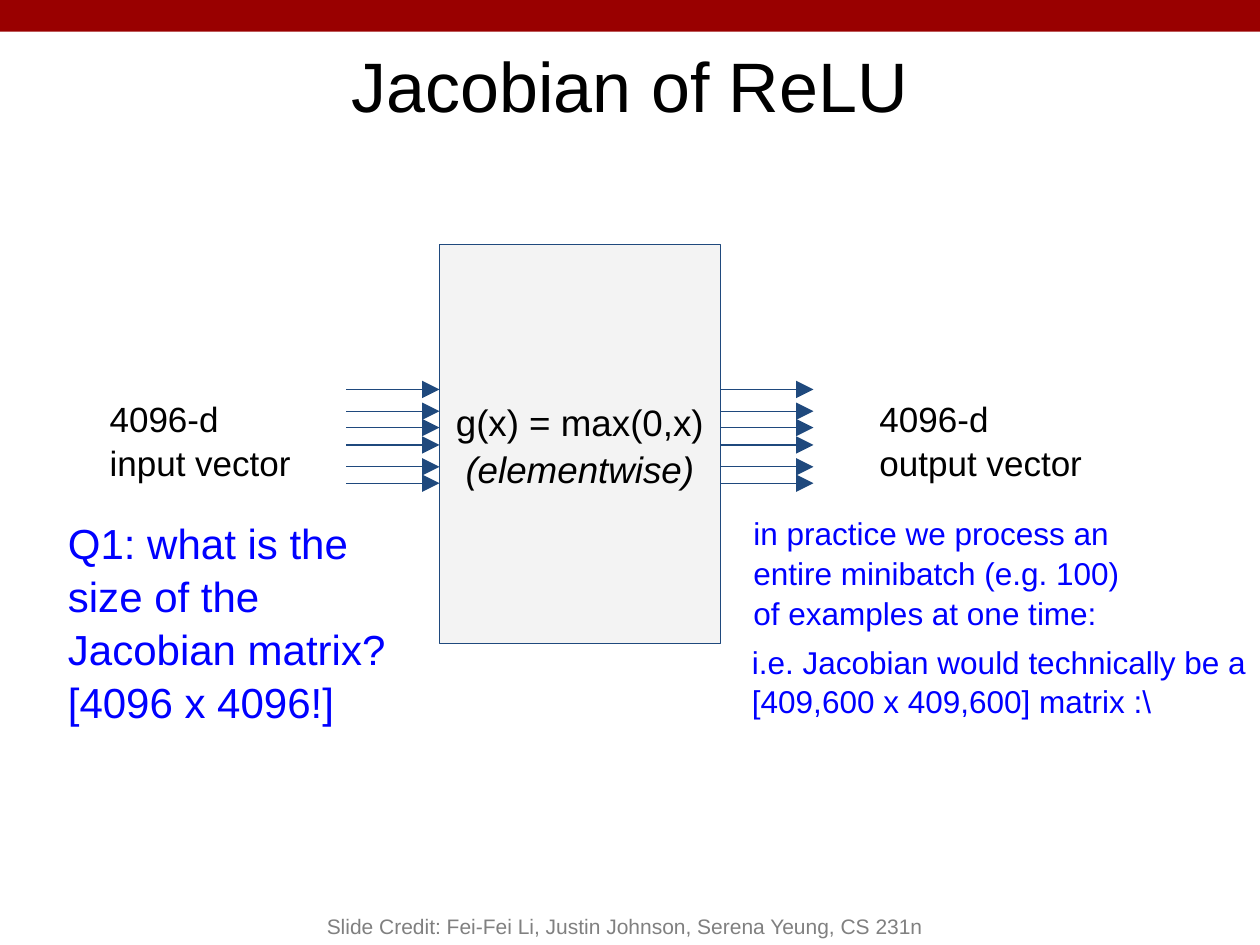
from lxml import etree
from pptx import Presentation
from pptx.dml.color import RGBColor
from pptx.enum.shapes import MSO_CONNECTOR, MSO_SHAPE
from pptx.enum.text import MSO_ANCHOR, PP_ALIGN
from pptx.oxml.ns import qn
from pptx.util import Cm, Pt

BLACK = RGBColor(0x00, 0x00, 0x00)
BLUE = RGBColor(0x00, 0x00, 0xFF)
GRAY = RGBColor(0x80, 0x80, 0x80)
NAVY = RGBColor(0x1F, 0x49, 0x7D)
PALE = RGBColor(0xF3, 0xF3, 0xF3)
RED = RGBColor(0x99, 0x00, 0x00)

FONT = "Arial"
LINE_WIDTH = Pt(0.75)
BODY_SPACING = 1.05

GATE_LEFT, GATE_TOP, GATE_WIDTH, GATE_HEIGHT = 8.86, 4.93, 5.66, 8.05
ARROW_LENGTH = 1.88
ARROW_GROUP_TOPS = (7.85, 8.97)
ARROW_OFFSETS = (0, 0.44, 0.77)
LABEL_TOP = 7.72


def write_lines(frame, lines, size, color, align=PP_ALIGN.LEFT, spacing=None,
                italic_lines=()):
    """Write each line as one paragraph with a single run."""
    for index, line in enumerate(lines):
        paragraph = frame.paragraphs[0] if index == 0 else frame.add_paragraph()
        paragraph.alignment = align
        if spacing:
            paragraph.line_spacing = spacing
        run = paragraph.add_run()
        run.text = line
        run.font.name = FONT
        run.font.size = Pt(size)
        run.font.color.rgb = color
        if index in italic_lines:
            run.font.italic = True


def set_insets(frame, inset):
    frame.margin_left = frame.margin_right = inset
    frame.margin_top = frame.margin_bottom = inset


def add_text(slide, left, top, width, height, lines, size, color):
    box = slide.shapes.add_textbox(Cm(left), Cm(top), Cm(width), Cm(height))
    frame = box.text_frame
    frame.word_wrap = True
    set_insets(frame, Cm(0.25))
    write_lines(frame, lines, size, color, spacing=BODY_SPACING)


def add_centered_text(slide, left, top, width, height, line, size, color, anchor):
    box = slide.shapes.add_textbox(Cm(left), Cm(top), Cm(width), Cm(height))
    frame = box.text_frame
    frame.word_wrap = True
    frame.vertical_anchor = anchor
    write_lines(frame, [line], size, color, PP_ALIGN.CENTER)


def add_rectangle(slide, left, top, width, height, fill, outline=None):
    rectangle = slide.shapes.add_shape(
        MSO_SHAPE.RECTANGLE, Cm(left), Cm(top), Cm(width), Cm(height))
    rectangle.shadow.inherit = False
    rectangle.fill.solid()
    rectangle.fill.fore_color.rgb = fill
    if outline is None:
        rectangle.line.fill.background()
    else:
        rectangle.line.color.rgb = outline
        rectangle.line.width = LINE_WIDTH
    return rectangle


def add_gate(slide):
    gate = add_rectangle(slide, GATE_LEFT, GATE_TOP, GATE_WIDTH, GATE_HEIGHT,
                         PALE, NAVY)
    frame = gate.text_frame
    frame.word_wrap = True
    frame.vertical_anchor = MSO_ANCHOR.MIDDLE
    set_insets(frame, Cm(0.25))
    write_lines(frame, ["g(x) = max(0,x)", "(elementwise)"], 21, BLACK,
                PP_ALIGN.CENTER, BODY_SPACING, italic_lines=(1,))


def add_arrow(slide, left, y):
    arrow = slide.shapes.add_connector(
        MSO_CONNECTOR.STRAIGHT, Cm(left), Cm(y), Cm(left + ARROW_LENGTH), Cm(y))
    arrow.line.color.rgb = NAVY
    arrow.line.width = LINE_WIDTH
    properties = arrow.element.spPr
    head = etree.SubElement(properties.find(qn("a:ln")), qn("a:tailEnd"))
    head.set("type", "triangle")
    head.set("w", "lg")
    head.set("len", "lg")
    etree.SubElement(properties, qn("a:effectLst"))


def add_arrow_bundle(slide, left):
    for group_top in ARROW_GROUP_TOPS:
        for offset in ARROW_OFFSETS:
            add_arrow(slide, left, group_top + offset)


def main():
    presentation = Presentation()
    presentation.slide_width = Cm(25.4)
    presentation.slide_height = Cm(19.05)
    slide = presentation.slides.add_slide(presentation.slide_layouts[6])

    add_rectangle(slide, 0, 0, 25.4, 0.64, RED)
    add_text(slide, 14.91, 12.67, 10.49, 2.03,
             ["i.e. Jacobian would technically be a",
              "[409,600 x 409,600] matrix :\\"], 18, BLUE)

    add_gate(slide)
    add_arrow_bundle(slide, GATE_LEFT - ARROW_LENGTH)
    add_text(slide, 1.96, LABEL_TOP, 6.76, 1.3,
             ["4096-d", "input vector"], 20, BLACK)
    add_arrow_bundle(slide, GATE_LEFT + GATE_WIDTH)
    add_text(slide, 17.48, LABEL_TOP, 5.23, 1.3,
             ["4096-d", "output vector"], 20, BLACK)

    add_text(slide, 1.12, 10.13, 7.11, 3.2,
             ["Q1: what is the size of the Jacobian matrix?",
              "[4096 x 4096!]"], 24, BLUE)
    add_text(slide, 14.94, 10.08, 8.26, 1.8,
             ["in practice we process an entire minibatch (e.g. 100) "
              "of examples at one time:"], 18, BLUE)

    add_centered_text(slide, 0.86, 0.64, 23.67, 2.13, "Jacobian of ReLU",
                      40, BLACK, MSO_ANCHOR.MIDDLE)
    add_centered_text(
        slide, 5.08, 17.78, 15.04, 1.27,
        "Slide Credit: Fei-Fei Li, Justin Johnson, Serena Yeung, CS 231n",
        12, GRAY, MSO_ANCHOR.BOTTOM)

    presentation.save("out.pptx")


if __name__ == "__main__":
    main()
